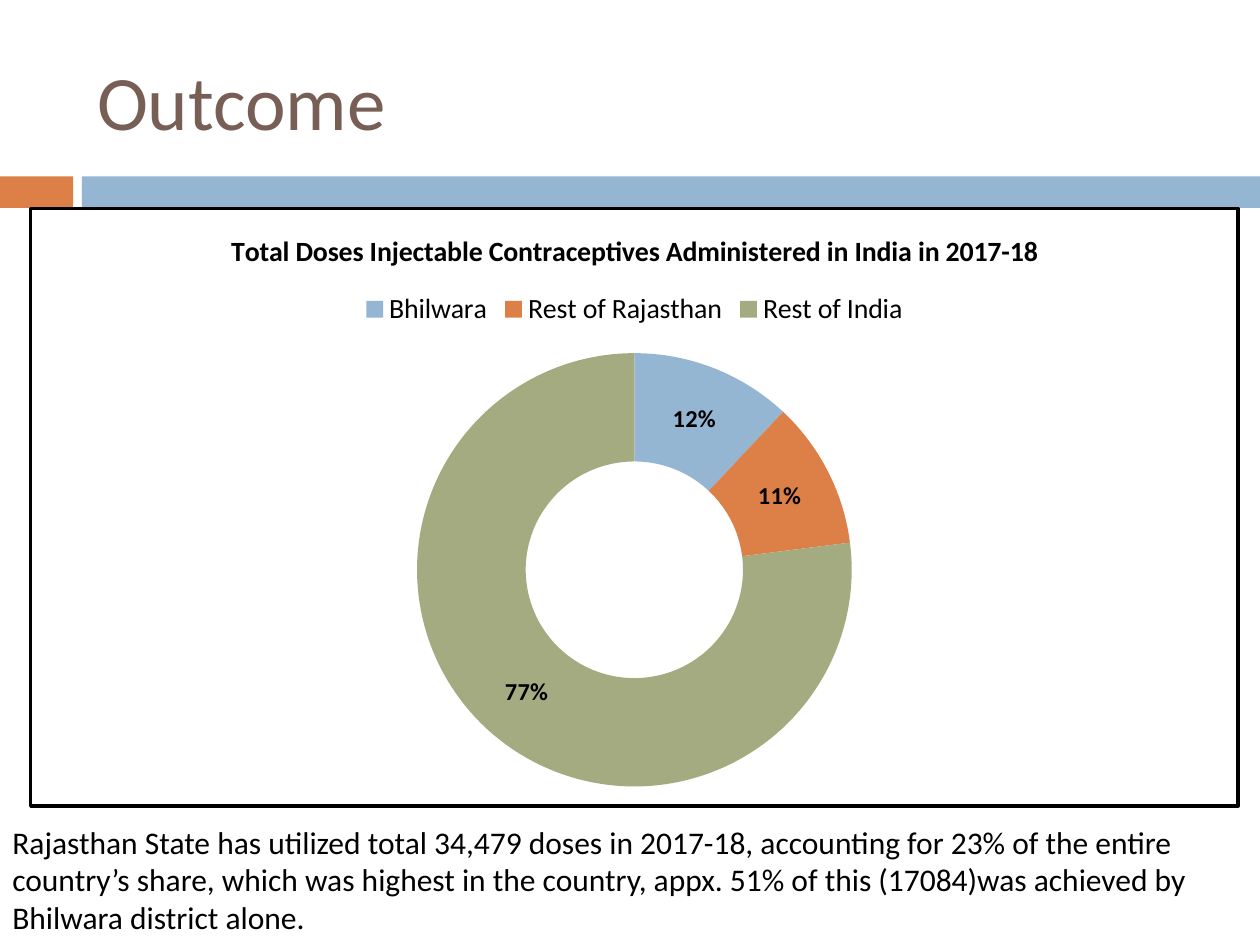
from lxml.etree import SubElement
from pptx import Presentation
from pptx.chart.data import CategoryChartData
from pptx.dml.color import RGBColor
from pptx.enum.chart import XL_CHART_TYPE, XL_LEGEND_POSITION
from pptx.enum.shapes import MSO_SHAPE
from pptx.enum.text import MSO_ANCHOR, PP_ALIGN
from pptx.oxml import parse_xml
from pptx.oxml.ns import nsdecls, qn
from pptx.util import Inches, Pt

WIDTH, HEIGHT = 10, 7.5
FONT = "Calibri"
BLUE, ORANGE, GREEN = "94B6D2", "DD8047", "A5AB81"
BROWN, BLACK, WHITE = "775F55", "000000", "FFFFFF"
SHARES = {"Bhilwara": (12, BLUE), "Rest of Rajasthan": (11, ORANGE), "Rest of India": (77, GREEN)}
CHART_TITLE = "Total Doses Injectable Contraceptives Administered in India in 2017-18"
SUMMARY = (
    "Rajasthan State has utilized total 34,479 doses in 2017-18, accounting for 23% of the entire "
    "country’s share, which was highest in the country, appx. 51% of this (17084)was achieved by "
    "Bhilwara district alone."
)


def color(value):
    """Turn a hex string into a colour."""
    return RGBColor.from_string(value)


def place(shape, box):
    """Move a shape to a box given in inches."""
    shape.left, shape.top, shape.width, shape.height = map(Inches, box)


def format_font(font, size, bold=False, fill=BLACK):
    """Set typeface, size, weight and colour of a font."""
    font.name, font.size, font.bold = FONT, Pt(size), bold
    font.color.rgb = color(fill)


def write_text(text_frame, text, size=18, bold=False, fill=BLACK, align=PP_ALIGN.LEFT, anchor=None):
    """Write one formatted paragraph into a text frame."""
    paragraph = text_frame.paragraphs[0]
    paragraph.alignment = align
    run = paragraph.add_run()
    run.text = text
    format_font(run.font, size, bold, fill)
    if anchor is not None:
        text_frame.word_wrap = True
        text_frame.vertical_anchor = anchor


def add_title(slide, box):
    """Place the slide heading."""
    place(slide.shapes.title, box)
    write_text(slide.shapes.title.text_frame, "Outcome", size=44, fill=BROWN, anchor=MSO_ANCHOR.MIDDLE)


def add_band(slide, box, split=0.58, gap=0.07):
    """Draw the two-colour band across the box."""
    left, top, width, height = box
    start = split + gap
    for x, length, fill in ((left, split, ORANGE), (left + start, width - start, BLUE)):
        bar = slide.shapes.add_shape(MSO_SHAPE.RECTANGLE, *map(Inches, (x, top, length, height)))
        bar.shadow.inherit = False
        bar.fill.solid()
        bar.fill.fore_color.rgb = color(fill)
        bar.line.fill.background()


def frame_chart(chart, line_width=2):
    """Give the chart area a white fill and a black border."""
    properties = parse_xml(
        f'<c:spPr {nsdecls("c", "a")}>'
        f'<a:solidFill><a:srgbClr val="{WHITE}"/></a:solidFill>'
        f'<a:ln w="{Pt(line_width)}"><a:solidFill><a:srgbClr val="{BLACK}"/></a:solidFill></a:ln>'
        "</c:spPr>"
    )
    chart.element.find(qn("c:chart")).addnext(properties)


def fix_plot_area(chart, **shares):
    """Set the inner plot area as shares of the chart."""
    plot_area = chart.element.find(qn("c:chart")).find(qn("c:plotArea"))
    for layout in plot_area.findall(qn("c:layout")):
        plot_area.remove(layout)
    layout = parse_xml(f'<c:layout {nsdecls("c")}/>')
    plot_area.insert(0, layout)
    manual = SubElement(layout, qn("c:manualLayout"))
    settings = {"layoutTarget": "inner", "xMode": "edge", "yMode": "edge", **shares}
    for name, value in settings.items():
        SubElement(manual, qn(f"c:{name}")).set("val", str(value))


def add_share_chart(slide, box):
    """Place the doughnut of administered doses."""
    data = CategoryChartData()
    data.categories = list(SHARES)
    data.add_series("Series 1", [value for value, _ in SHARES.values()])
    chart = slide.shapes.add_chart(XL_CHART_TYPE.DOUGHNUT, *map(Inches, box), data).chart
    format_font(chart.font, 10)
    chart.has_title = True
    write_text(chart.chart_title.text_frame, CHART_TITLE, size=16, bold=True, align=PP_ALIGN.CENTER)
    chart.has_legend = True
    chart.legend.position = XL_LEGEND_POSITION.TOP
    chart.legend.include_in_layout = False
    format_font(chart.legend.font, 16)

    plot = chart.plots[0]
    plot.vary_by_categories = True
    series = plot.series[0]
    for index, (_, fill) in enumerate(SHARES.values()):
        point = series.points[index].format.fill
        point.solid()
        point.fore_color.rgb = color(fill)
    labels = series.data_labels
    labels.show_percentage, labels.show_value = True, False
    labels.number_format, labels.number_format_is_linked = "0%", False
    format_font(labels.font, 14, bold=True)
    frame_chart(chart)
    fix_plot_area(chart, x=0.32, y=0.24, w=0.36, h=0.73)


def add_summary(slide, box):
    """Place the closing statement."""
    text_box = slide.shapes.add_textbox(*map(Inches, box))
    write_text(text_box.text_frame, SUMMARY, anchor=MSO_ANCHOR.TOP)


def main():
    """Build and save the presentation."""
    presentation = Presentation()
    presentation.slide_width, presentation.slide_height = Inches(WIDTH), Inches(HEIGHT)
    slide = presentation.slides.add_slide(presentation.slide_layouts[5])
    add_band(slide, (0, 1.4, WIDTH, 0.25))
    add_title(slide, (0.67, 0.25, 8.92, 1.08))
    add_share_chart(slide, (0.23, 1.64, 9.61, 4.77))
    add_summary(slide, (0, 6.48, WIDTH, 1.01))
    presentation.save("out.pptx")


if __name__ == "__main__":
    main()
